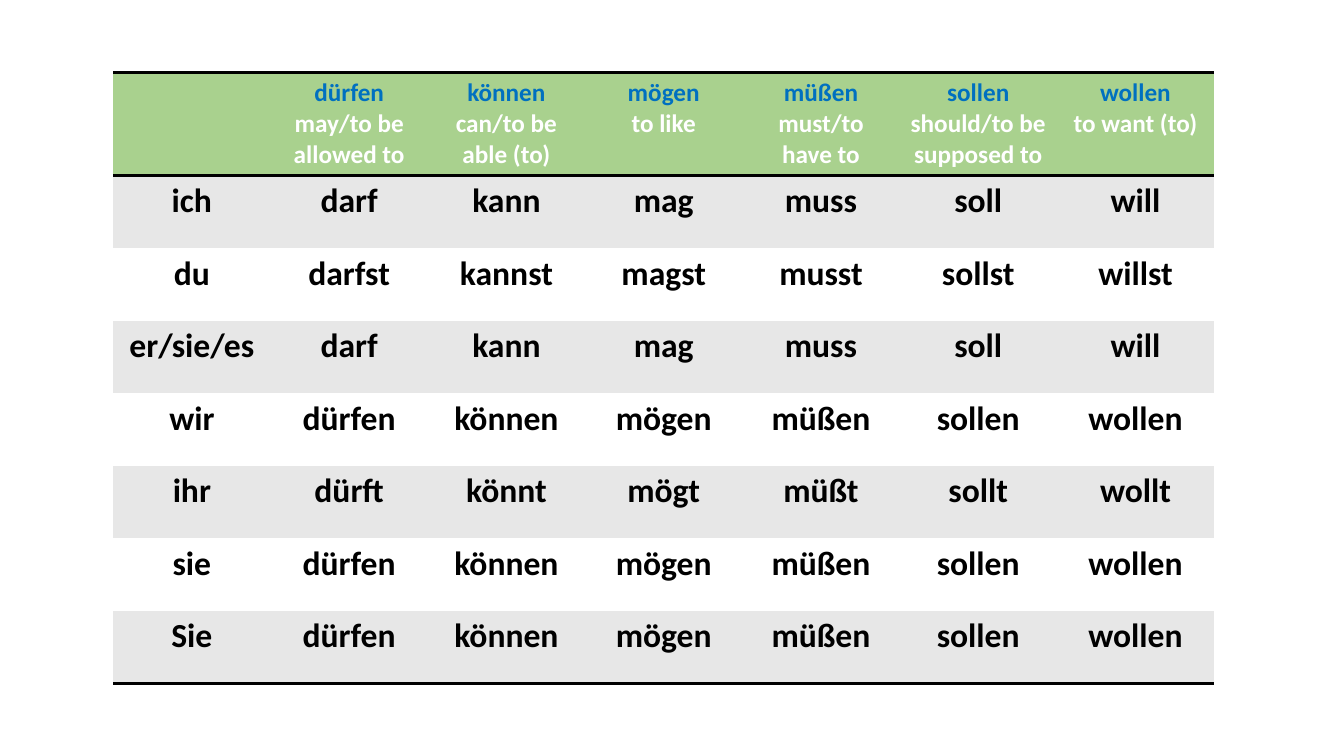
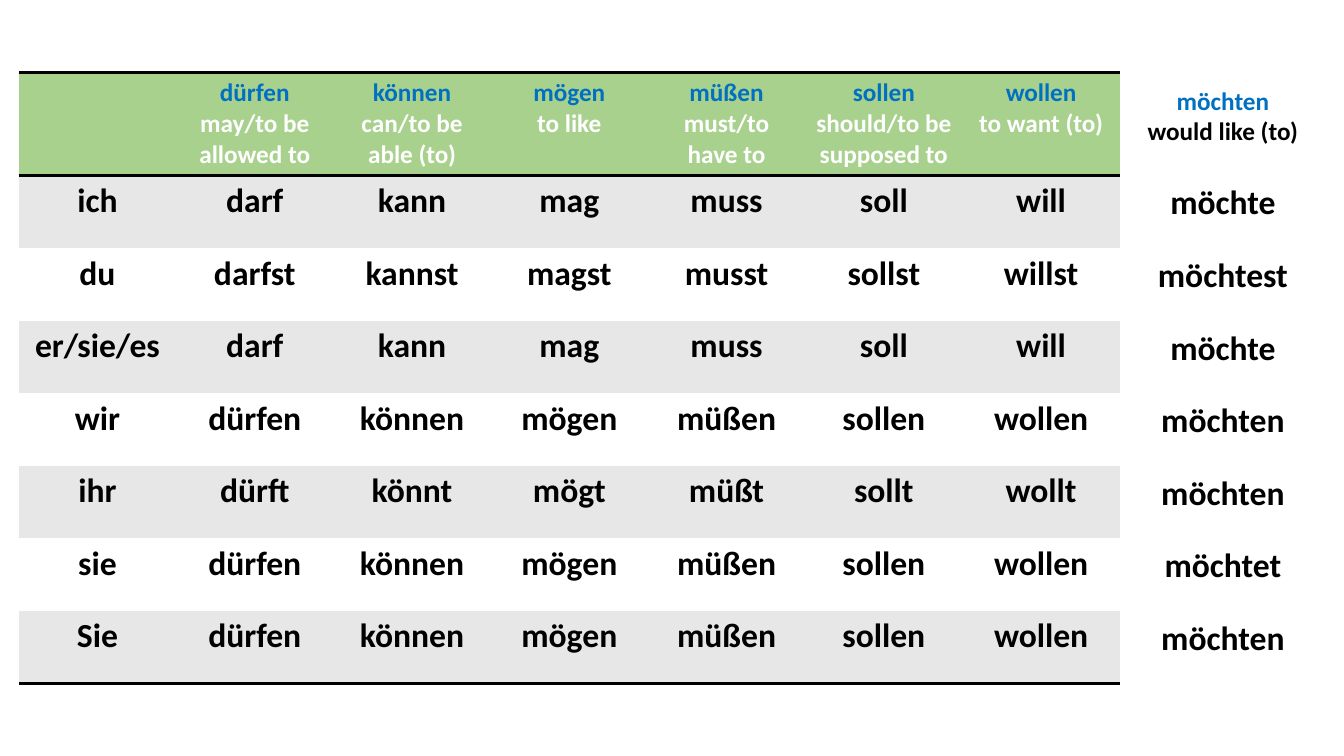
from dataclasses import dataclass

from lxml import etree
from pptx import Presentation
from pptx.dml.color import RGBColor
from pptx.enum.text import MSO_AUTO_SIZE, PP_ALIGN
from pptx.oxml.ns import qn
from pptx.util import Inches, Pt

CENTER = PP_ALIGN.CENTER
GROW = MSO_AUTO_SIZE.SHAPE_TO_FIT_TEXT
PLAIN = "{2D5ABB26-0587-4C30-8999-92F81FD0307C}"


@dataclass(frozen=True)
class Theme:
    font: str = "Calibri"
    small: int = 18
    large: int = 24
    rule: int = 2
    ink: str = "000000"
    paper: str = "FFFFFF"
    blue: str = "0070C0"
    green: str = "A9D18E"
    gray: str = "E7E7E7"


VERBS = [
    ("dürfen", "may/to be allowed to"),
    ("können", "can/to be able (to)"),
    ("mögen", "to like"),
    ("müßen", "must/to have to"),
    ("sollen", "should/to be supposed to"),
    ("wollen", "to want (to)"),
]
SINGLE = ["darf", "kann", "mag", "muss", "soll", "will"]
PLURAL = [verb for verb, sense in VERBS]
FORMS = [
    ("ich", SINGLE),
    ("du", ["darfst", "kannst", "magst", "musst", "sollst", "willst"]),
    ("er/sie/es", SINGLE),
    ("wir", PLURAL),
    ("ihr", ["dürft", "könnt", "mögt", "müßt", "sollt", "wollt"]),
    ("sie", PLURAL),
    ("Sie", PLURAL),
]
WISH = ("möchten", "would like (to)")
WISHES = ["möchte", "möchtest", "möchte", "möchten", "möchten", "möchtet", "möchten"]

COL, ROW = 1.56, 0.72
TOP, HEAD = 1, 1.42
BODY = TOP + HEAD


def across(cols):
    return Inches(cols * COL)


def down(rows):
    return Inches(rows * ROW)


class Deck:
    def __init__(self, theme):
        self.theme = theme
        self.file = Presentation()
        self.file.slide_width = Inches(13.33)
        self.file.slide_height = Inches(7.5)
        self.slide = None

    def page(self):
        self.slide = self.file.slides.add_slide(self.file.slide_layouts[6])

    def text(self, frame, lines):
        for i, (words, size, color) in enumerate(lines):
            para = frame.add_paragraph() if i else frame.paragraphs[0]
            para.text = words
            para.alignment = CENTER
            font = para.font
            font.name = self.theme.font
            font.size = Pt(size)
            font.bold = True
            font.color.rgb = RGBColor.from_string(color)

    def title(self, pair, color):
        verb, sense = pair
        size = self.theme.small
        return [(verb, size, self.theme.blue), (sense, size, color)]

    def form(self, word):
        return [(word, self.theme.large, self.theme.ink)]

    def border(self, cell, sides):
        props = cell._tc.get_or_add_tcPr()
        for i, side in enumerate(sides):
            line = etree.Element(qn("a:" + side), w=str(Pt(self.theme.rule)))
            fill = etree.SubElement(line, qn("a:solidFill"))
            etree.SubElement(fill, qn("a:srgbClr"), val=self.theme.ink)
            props.insert(i, line)

    def cell(self, cell, lines, fill, sides):
        cell.fill.solid()
        cell.fill.fore_color.rgb = RGBColor.from_string(fill)
        self.text(cell.text_frame, lines)
        self.border(cell, sides)

    def table(self, left):
        look = self.theme
        rows, cols = len(FORMS) + 1, len(VERBS) + 1
        frame = self.slide.shapes.add_table(
            rows, cols, across(left), down(TOP),
            across(cols), down(HEAD + len(FORMS)))
        table = frame.table
        table.first_row = table.horz_banding = False
        table._tbl.tblPr.find(qn("a:tableStyleId")).text = PLAIN
        for col in table.columns:
            col.width = across(1)
        for i, row in enumerate(table.rows):
            row.height = down(1 if i else HEAD)
        heads = [[]] + [self.title(pair, look.paper) for pair in VERBS]
        for c, lines in enumerate(heads):
            self.cell(table.cell(0, c), lines, look.green, ["lnT", "lnB"])
        for r, (who, words) in enumerate(FORMS, 1):
            fill = look.gray if r % 2 else look.paper
            sides = ["lnB"] if r == len(FORMS) else []
            for c, word in enumerate([who] + words):
                self.cell(table.cell(r, c), self.form(word), fill, sides)

    def label(self, left, top, high, lines):
        box = self.slide.shapes.add_textbox(
            across(left), down(top), across(1.31), down(high))
        frame = box.text_frame
        frame.word_wrap = True
        frame.auto_size = GROW
        self.text(frame, lines)

    def aside(self, left):
        self.label(left, 1.11, 0.99, self.title(WISH, self.theme.ink))
        for i, word in enumerate(WISHES):
            self.label(left, BODY + 0.01 + i, 0.7, self.form(word))


def main():
    deck = Deck(Theme())
    deck.page()
    deck.table(0.72)
    deck.page()
    edge = 0.12
    deck.table(edge)
    deck.aside(edge + len(VERBS) + 1)
    deck.file.save("out.pptx")


if __name__ == "__main__":
    main()
